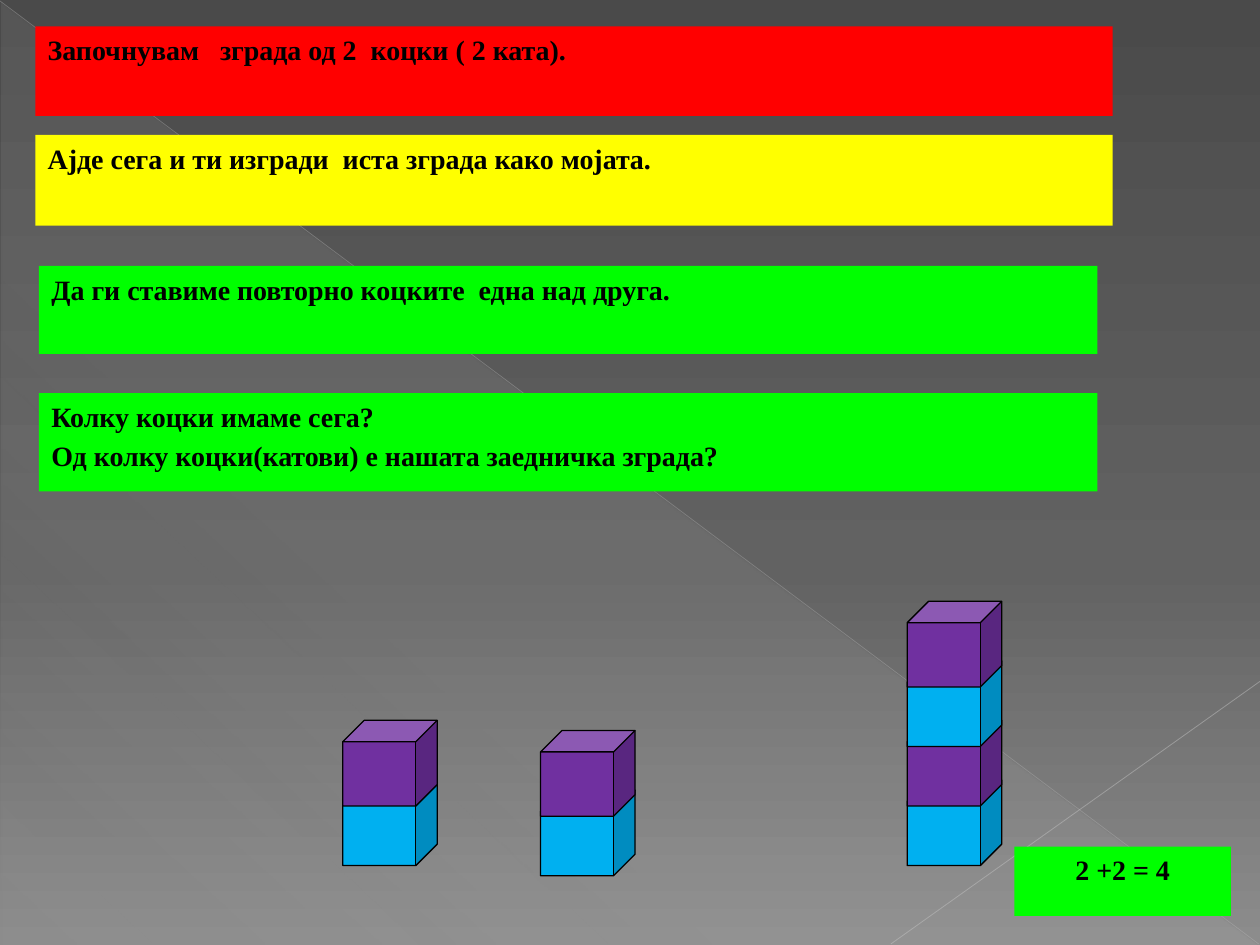
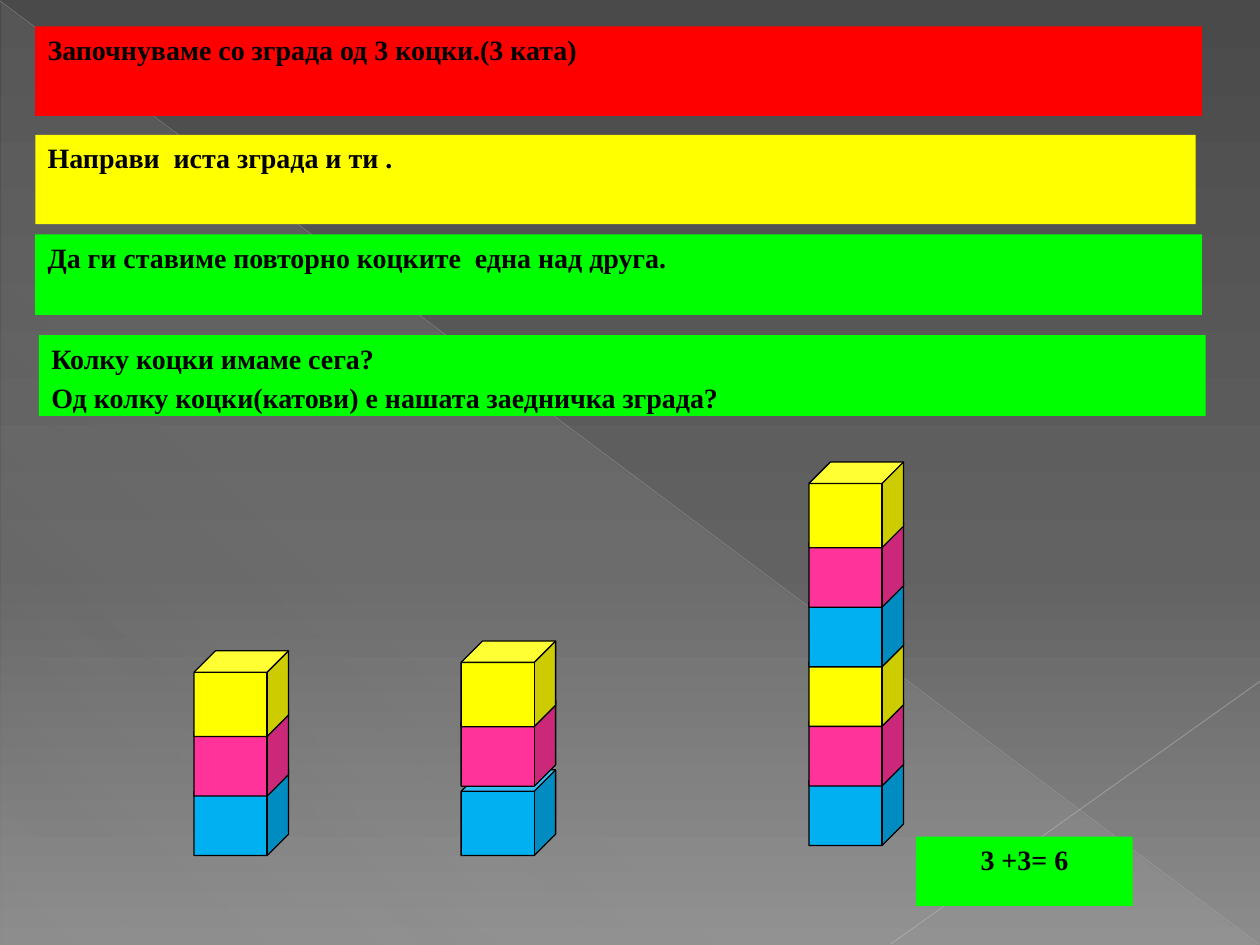
"""Builds two counting slides with instructions and towers of stacked cubes."""
import pptx
import pptx.util
import pptx.dml.color
import pptx.enum.shapes
import pptx.enum.text
import pptx.oxml.ns
import lxml.etree

RGB = pptx.dml.color.RGBColor
SHAPE = pptx.enum.shapes.MSO_SHAPE
ALIGN = pptx.enum.text.PP_ALIGN
qn = pptx.oxml.ns.qn

BLACK = RGB(0x00, 0x00, 0x00)
RED = RGB(0xFF, 0x00, 0x00)
YELLOW = RGB(0xFF, 0xFF, 0x00)
GREEN = RGB(0x00, 0xFF, 0x00)
BLUE = RGB(0x00, 0xB0, 0xF0)
PURPLE = RGB(0x70, 0x30, 0xA0)
PINK = RGB(0xFF, 0x33, 0x99)
SHEEN = RGB(0xD2, 0xD2, 0xD2)
BACKDROP = [(0, RGB(0x4A, 0x4A, 0x4A), 100), (60, RGB(0x62, 0x62, 0x62), 100),
            (100, RGB(0x8C, 0x8C, 0x8C), 100)]
SHEEN_STOPS = [(0, SHEEN, 10), (70, SHEEN, 8), (100, SHEEN, 1)]
RAYS = [(0, 0.1, 99.9, 99.9, RGB(0xBF, 0xBF, 0xBF), 0.39, 35),
        (100, 72.1, 70.7, 99.9, RGB(0xC6, 0xC6, 0xC6), 0.47, 45)]

FONT = "Times New Roman"
CUBE_WIDTH, CUBE_HEIGHT, CUBE_STEP = 7.5, 9.07, 6.3
ANSWER_WIDTH, ANSWER_HEIGHT = 17.2, 7.33
REPEAT = "Да ги ставиме повторно коцките  една над друга."
QUESTIONS = "Колку коцки имаме сега?\nОд колку коцки(катови) е нашата заедничка зграда?"

LESSONS = [
    {"panels": [
        (2.8, 2.8, 85.5, 9.47, RED, "Започнувам   зграда од 2  коцки ( 2 ката)."),
        (2.8, 14.27, 85.5, 9.6, YELLOW, "Ајде сега и ти изгради  иста зграда како мојата."),
        (3.1, 28.13, 84, 9.33, GREEN, REPEAT),
        (3.1, 41.6, 84, 10.4, GREEN, QUESTIONS)],
     "towers": [(27.2, 82.53, [BLUE, PURPLE]), (42.9, 83.6, [BLUE, PURPLE]),
                (72, 82.53, [BLUE, PURPLE] * 2)],
     "answer": (80.5, 89.6, "2 +2 = 4")},
    {"panels": [
        (2.8, 2.8, 92.6, 9.47, RED, "Започнуваме со зграда од 3 коцки.(3 ката)"),
        (2.8, 14.27, 92.1, 9.47, YELLOW, "Направи  иста зграда и ти ."),
        (2.8, 24.8, 92.6, 8.53, GREEN, REPEAT),
        (3.1, 35.47, 92.6, 8.53, GREEN, QUESTIONS)],
     "towers": [(15.4, 81.47, [BLUE, PINK, YELLOW]), (36.6, 81.47, [BLUE]),
                (36.6, 74.13, [PINK, YELLOW]), (64.2, 80.4, [BLUE, PINK, YELLOW] * 2)],
     "answer": (72.7, 88.53, "3 +3= 6")},
]

deck = pptx.Presentation()
deck.slide_width = pptx.util.Inches(10)
deck.slide_height = pptx.util.Inches(7.5)
COLUMN, ROW = deck.slide_width // 100, deck.slide_height // 100


def add_block(slide, kind, left, top, width, height):
    """Add a shadowless, unlined shape placed in percent of the slide."""
    block = slide.shapes.add_shape(kind, int(left * COLUMN), int(top * ROW),
                                   int(width * COLUMN), int(height * ROW))
    block.shadow.inherit = False
    block.line.fill.background()
    return block


def set_gradient(fill, element, stops, angle):
    """Give a fill its gradient stops of (position, colour, opacity)."""
    fill.gradient()
    fill.gradient_angle = 360 - angle
    stop_list = element.find(".//" + qn("a:gsLst"))
    for preset in list(stop_list):
        stop_list.remove(preset)
    for position, colour, opacity in stops:
        stop = lxml.etree.SubElement(stop_list, qn("a:gs"), pos=str(position * 1000))
        tint = lxml.etree.SubElement(stop, qn("a:srgbClr"), val=str(colour))
        lxml.etree.SubElement(tint, qn("a:alpha"), val=str(opacity * 1000))


for lesson in LESSONS:
    slide = deck.slides.add_slide(deck.slide_layouts[6])
    set_gradient(slide.background.fill, slide.element, BACKDROP, 90)
    sheen = add_block(slide, SHAPE.RIGHT_TRIANGLE, 0.1, 0.27, 99.8, 99.73)
    set_gradient(sheen.fill, sheen.element, SHEEN_STOPS, 133)

    for x1, y1, x2, y2, colour, weight, opacity in RAYS:
        ray = slide.shapes.add_connector(
            pptx.enum.shapes.MSO_CONNECTOR.STRAIGHT,
            int(x1 * COLUMN), int(y1 * ROW), int(x2 * COLUMN), int(y2 * ROW))
        ray.line.color.rgb = colour
        ray.line.width = pptx.util.Pt(weight)
        tint = ray.element.find(".//" + qn("a:srgbClr"))
        lxml.etree.SubElement(tint, qn("a:alpha"), val=str(opacity * 1000))
        lxml.etree.SubElement(ray.element.spPr, qn("a:effectLst"))

    answer_left, answer_top, equation = lesson["answer"]
    answer = (answer_left, answer_top, ANSWER_WIDTH, ANSWER_HEIGHT, GREEN, equation)
    for left, top, width, height, colour, wording in lesson["panels"] + [answer]:
        panel = add_block(slide, SHAPE.RECTANGLE, left, top, width, height)
        panel.fill.solid()
        panel.fill.fore_color.rgb = colour
        panel.text_frame.word_wrap = True
        panel.text_frame.vertical_anchor = pptx.enum.text.MSO_ANCHOR.TOP
        panel.text_frame.text = wording
        for paragraph in panel.text_frame.paragraphs:
            paragraph.alignment = ALIGN.CENTER if wording == equation else ALIGN.LEFT
            paragraph.font.name = FONT
            paragraph.font.size = pptx.util.Pt(16)
            paragraph.font.bold = True
            paragraph.font.color.rgb = BLACK
            indent = pptx.util.Inches(0.38)
            settings = paragraph._p.get_or_add_pPr()
            settings.set("marL", str(indent))
            settings.set("indent", str(-indent))
            spacing = lxml.etree.Element(qn("a:spcBef"))
            lxml.etree.SubElement(spacing, qn("a:spcPct"), val="20000")
            settings.insert(0, spacing)

    for left, base_top, floors in lesson["towers"]:
        for floor, colour in enumerate(floors):
            cube = add_block(slide, SHAPE.CUBE, left, base_top - floor * CUBE_STEP,
                             CUBE_WIDTH, CUBE_HEIGHT)
            cube.fill.solid()
            cube.fill.fore_color.rgb = colour
            cube.line.color.rgb = BLACK
            cube.line.width = pptx.util.Pt(0.75)

deck.save("out.pptx")
